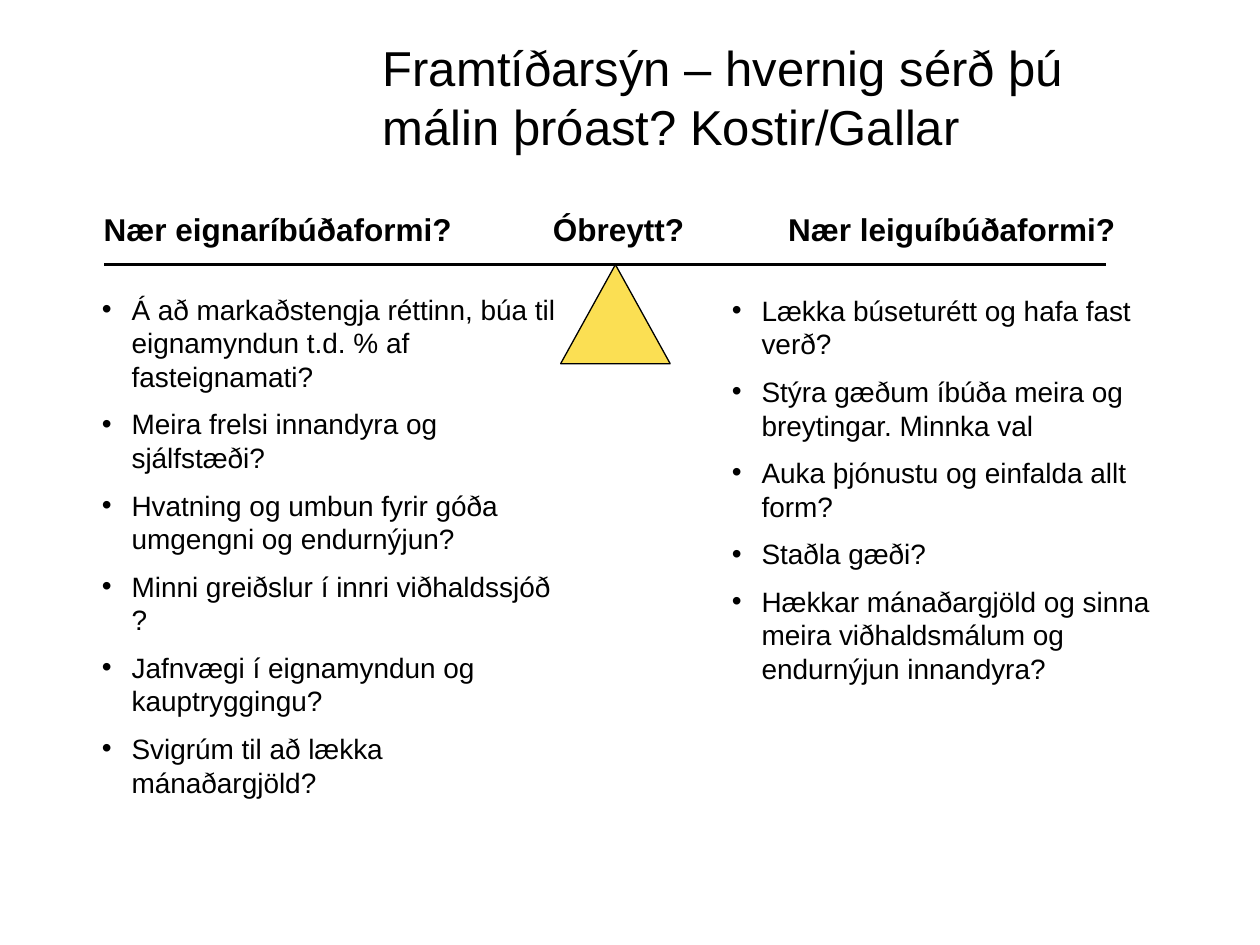
from lxml import etree
from pptx import Presentation
from pptx.dml.color import RGBColor
from pptx.enum.shapes import MSO_CONNECTOR, MSO_SHAPE
from pptx.enum.text import MSO_ANCHOR, PP_ALIGN
from pptx.oxml.ns import qn
from pptx.util import Pt

LEFT, CENTER = PP_ALIGN.LEFT, PP_ALIGN.CENTER
TOP, MIDDLE = MSO_ANCHOR.TOP, MSO_ANCHOR.MIDDLE
TRIANGLE, STRAIGHT = MSO_SHAPE.ISOSCELES_TRIANGLE, MSO_CONNECTOR.STRAIGHT

THEME = {
    "font": "Arial",
    "ink": RGBColor(0x00, 0x00, 0x00),
    "pivot": RGBColor(0xFB, 0xDF, 0x53),
    "title": 28,
    "heading": 18,
    "body": 16,
}

TITLE = "Framtíðarsýn – hvernig sérð þú málin þróast? Kostir/Gallar"
HEADINGS = [
    ("Nær eignaríbúðaformi?", 42.5, 232.5, CENTER),
    ("Óbreytt?", 308.9, 91, LEFT),
    ("Nær leiguíbúðaformi?", 427.7, 232.5, CENTER),
]
COLUMNS = [
    (51.1, 163.4, 275, 267, [
        "Á að markaðstengja réttinn, búa til eignamyndun t.d. % af fasteignamati?",
        "Meira frelsi innandyra og sjálfstæði?",
        "Hvatning og umbun fyrir góða umgengni og endurnýjun?",
        "Minni greiðslur í innri viðhaldssjóð ?",
        "Jafnvægi í eignamyndun og kauptryggingu?",
        "Svigrúm til að lækka mánaðargjöld?",
    ]),
    (411.1, 164.1, 266.4, 238, [
        "Lækka búseturétt og hafa fast verð?",
        "Stýra gæðum íbúða meira og breytingar. Minnka val",
        "Auka þjónustu og einfalda allt form?",
        "Staðla gæði?",
        "Hækkar mánaðargjöld og sinna meira viðhaldsmálum og endurnýjun innandyra?",
    ]),
]
HEADING_TOP, HEADING_HEIGHT = 116.6, 29
BEAM_LEFT, BEAM_RIGHT, BEAM_Y = 59.5, 632, 151.2
PIVOT_CENTER, PIVOT_WIDTH, PIVOT_HEIGHT = 351.7, 62.6, 56.6
BULLET_INDENT = 17


def add_bullet(p):
    pPr = p._p.get_or_add_pPr()
    pPr.set("marL", str(Pt(BULLET_INDENT)))
    pPr.set("indent", str(-Pt(BULLET_INDENT)))
    etree.SubElement(pPr, qn("a:buFont")).set("typeface", THEME["font"])
    etree.SubElement(pPr, qn("a:buChar")).set("char", "•")


def add_text(s, texts, box, *, size, bold=False, align=LEFT, anchor=TOP, bullets=False):
    tf = s.shapes.add_textbox(*map(Pt, box)).text_frame
    tf.word_wrap = True
    tf.vertical_anchor = anchor
    for i, text in enumerate(texts):
        p = tf.paragraphs[0] if i == 0 else tf.add_paragraph()
        p.alignment = align
        if i:
            p.space_before = Pt(size / 2)
        if bullets:
            add_bullet(p)
        r = p.add_run()
        r.text = text
        r.font.name = THEME["font"]
        r.font.size = Pt(size)
        r.font.bold = bold
        r.font.color.rgb = THEME["ink"]


def add_pivot(s):
    left = PIVOT_CENTER - PIVOT_WIDTH / 2
    sp = s.shapes.add_shape(TRIANGLE, *map(Pt, (left, BEAM_Y, PIVOT_WIDTH, PIVOT_HEIGHT)))
    sp.shadow.inherit = False
    sp.fill.solid()
    sp.fill.fore_color.rgb = THEME["pivot"]
    sp.line.color.rgb = THEME["ink"]
    sp.line.width = Pt(0.75)


def add_beam(s):
    beam = s.shapes.add_connector(STRAIGHT, *map(Pt, (BEAM_LEFT, BEAM_Y, BEAM_RIGHT, BEAM_Y)))
    beam.line.color.rgb = THEME["ink"]
    beam.line.width = Pt(2)
    etree.SubElement(beam._element.spPr, qn("a:effectLst"))


def main():
    prs = Presentation()
    prs.slide_width, prs.slide_height = Pt(720), Pt(540)
    s = prs.slides.add_slide(prs.slide_layouts[6])
    add_text(s, [TITLE], (211.7, 10.1, 471.6, 90), size=THEME["title"], anchor=MIDDLE)
    add_pivot(s)
    add_beam(s)
    for text, left, width, align in HEADINGS:
        add_text(s, [text], (left, HEADING_TOP, width, HEADING_HEIGHT),
                 size=THEME["heading"], bold=True, align=align)
    for left, top, width, height, points in COLUMNS:
        add_text(s, points, (left, top, width, height), size=THEME["body"], bullets=True)
    prs.save("out.pptx")


if __name__ == "__main__":
    main()
